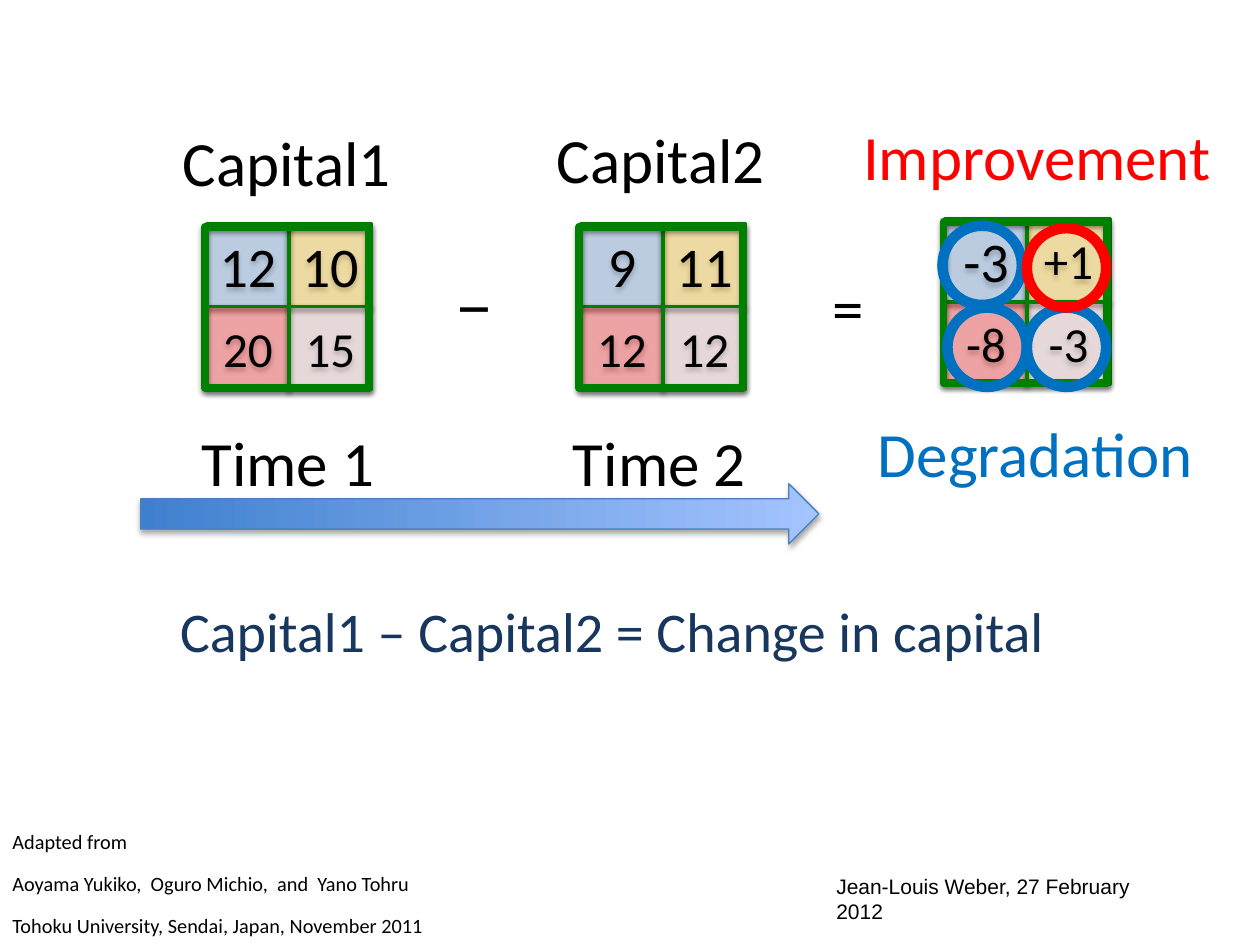
from lxml.etree import SubElement
from pptx import Presentation
from pptx.dml.color import RGBColor
from pptx.enum.shapes import MSO_SHAPE
from pptx.enum.text import MSO_ANCHOR, MSO_AUTO_SIZE, PP_ALIGN
from pptx.oxml.ns import qn
from pptx.util import Cm, Pt

BLACK = RGBColor(0x00, 0x00, 0x00)
WHITE = RGBColor(0xFF, 0xFF, 0xFF)
RED = RGBColor(0xFF, 0x00, 0x00)
BLUE = RGBColor(0x00, 0x70, 0xC0)
NAVY = RGBColor(0x17, 0x37, 0x5E)
GREEN = RGBColor(0x00, 0x80, 0x00)
SKY = RGBColor(0x55, 0x8E, 0xD5)
GOLD = RGBColor(0xFF, 0xC0, 0x00)
ROSE = RGBColor(0xE6, 0xB9, 0xB8)
EDGE = RGBColor(0x4B, 0x7E, 0xBC)
START = RGBColor(0x3F, 0x80, 0xCE)
END = RGBColor(0xA4, 0xC4, 0xFF)

TINTS = (SKY, GOLD, RED, ROSE)
CELL = 1.66
RING = 1.6


def child(node, tag, **attrs):
    return SubElement(node, qn(tag), {k: str(v) for k, v in attrs.items()})


class Board:
    def __init__(self, slide, font="Calibri"):
        self.slide = slide
        self.font = font

    def shape(self, kind, box, line, width, home=None):
        """Add an unfilled outline to the slide or to the group given as home."""
        item = (home or self.slide).shapes.add_shape(kind, *map(Cm, box))
        item.shadow.inherit = False
        item.fill.background()
        item.line.color.rgb = line
        item.line.width = Pt(width)
        return item

    def shade(self, item, alpha=35, dist=1.8):
        """Drop a soft black shadow straight down."""
        effects = item.element.spPr.find(qn("a:effectLst"))
        outer = child(effects, "a:outerShdw", blurRad=Pt(3.1), dist=Pt(dist),
                      dir=5400000, rotWithShape=0)
        tone = child(outer, "a:srgbClr", val="000000")
        child(tone, "a:alpha", val=alpha * 1000)

    def style(self, para, size, color, align=None, font=None, bold=None):
        para.font.name = font or self.font
        para.font.size = Pt(size)
        para.font.color.rgb = color
        para.font.bold = bold
        para.alignment = align

    def cell(self, home, left, top, tint, text, size):
        item = self.shape(MSO_SHAPE.RECTANGLE, (left, top, CELL, CELL),
                          GREEN, 2.25, home)
        item.fill.solid()
        item.fill.fore_color.rgb = tint
        tone = item.element.spPr.find(qn("a:solidFill"))[0]
        child(tone, "a:alpha", val=29000)
        self.shade(item)
        frame = item.text_frame
        frame.word_wrap = False
        frame.vertical_anchor = MSO_ANCHOR.MIDDLE
        frame.text = text
        self.style(frame.paragraphs[0], size, BLACK, PP_ALIGN.CENTER)

    def grid(self, left, top, cells):
        """Draw two by two tinted numbers inside a heavy frame."""
        home = self.slide.shapes.add_group_shape()
        for i, (tint, (text, size)) in enumerate(zip(TINTS, cells)):
            row, col = divmod(i, 2)
            self.cell(home, left + col * CELL, top + row * CELL,
                      tint, text, size)
        frame = self.shape(MSO_SHAPE.RECTANGLE,
                           (left - 0.03, top + 0.05, 3.3, 3.25),
                           GREEN, 4.5, home)
        self.shade(frame, 38, 1.6)

    def rings(self, spots):
        home = self.slide.shapes.add_group_shape()
        for left, top, color in spots:
            self.shape(MSO_SHAPE.OVAL, (left, top, RING, RING),
                       color, 6, home)

    def arrow(self, *box):
        item = self.shape(MSO_SHAPE.RIGHT_ARROW, box, EDGE, 0.75)
        item.fill.gradient()
        item.fill.gradient_angle = 0
        for stop, color in zip(item.fill.gradient_stops, (START, END)):
            stop.color.rgb = color
        self.shade(item)

    def text(self, box, lines, size, color=BLACK, wrap=False, fill=None,
             **look):
        item = self.slide.shapes.add_textbox(*map(Cm, box))
        if fill is not None:
            item.fill.solid()
            item.fill.fore_color.rgb = fill
        frame = item.text_frame
        frame.word_wrap = wrap
        frame.auto_size = MSO_AUTO_SIZE.NONE
        frame.text = lines
        for para in frame.paragraphs:
            self.style(para, size, color, **look)
        return frame


def main():
    deck = Presentation()
    deck.slide_width, deck.slide_height = Cm(25.4), Cm(19.05)
    board = Board(deck.slides.add_slide(deck.slide_layouts[6]))

    board.grid(19.05, 4.42, (("-3", 32), ("+1", 28), ("-8", 28), ("-3", 28)))
    board.text((3.38, 11.91, 18.14, 1.62),
               "Capital1 – Capital2 = Change in capital", 32, NAVY)
    board.arrow(2.84, 9.75, 13.67, 1.22)

    for left, top, width, label in (
        (3.81, 8.41, 4.04, "Time 1"),
        (11.3, 8.41, 4.04, "Time 2"),
        (16.54, 5.28, 1.14, "="),
        (3.43, 2.36, 4.75, "Capital1"),
        (10.97, 2.31, 4.75, "Capital2"),
    ):
        board.text((left, top, width, 1.8), label, 36)
    board.text((17.15, 2.24, 7.57, 1.8), "Improvement", 36, RED,
               wrap=True, fill=WHITE)
    board.text((17.45, 8.23, 7.24, 1.8), "Degradation", 36, BLUE,
               wrap=True, fill=WHITE)

    board.grid(4.17, 4.52, (("12", 32), ("10", 32), ("20", 28), ("15", 28)))
    board.grid(11.71, 4.52, (("9", 32), ("11", 32), ("12", 28), ("12", 28)))
    board.text((8.86, 4.88, 1.4, 3), "_", 32, wrap=True,
               align=PP_ALIGN.CENTER, bold=True)
    board.rings(((19.1, 6.2, BLUE), (20.7, 6.2, BLUE),
                 (19, 4.55, BLUE), (20.7, 4.6, RED)))

    credit = board.text(
        (0, 16.51, 14.12, 2.54),
        "Adapted from\n"
        "Aoyama Yukiko,  Oguro Michio,  and  Yano Tohru\n"
        "Tohoku University, Sendai, Japan, November 2011", 20, wrap=True)
    for para in credit.paragraphs:
        for run in para.runs:
            run.font._element.set("baseline", "30000")
    footer = board.text((16.61, 17.78, 6.6, 0.66),
                        "Jean-Louis Weber, 27 February 2012", 12,
                        wrap=True, font="Arial")
    footer.vertical_anchor = MSO_ANCHOR.MIDDLE

    deck.save("out.pptx")


if __name__ == "__main__":
    main()
